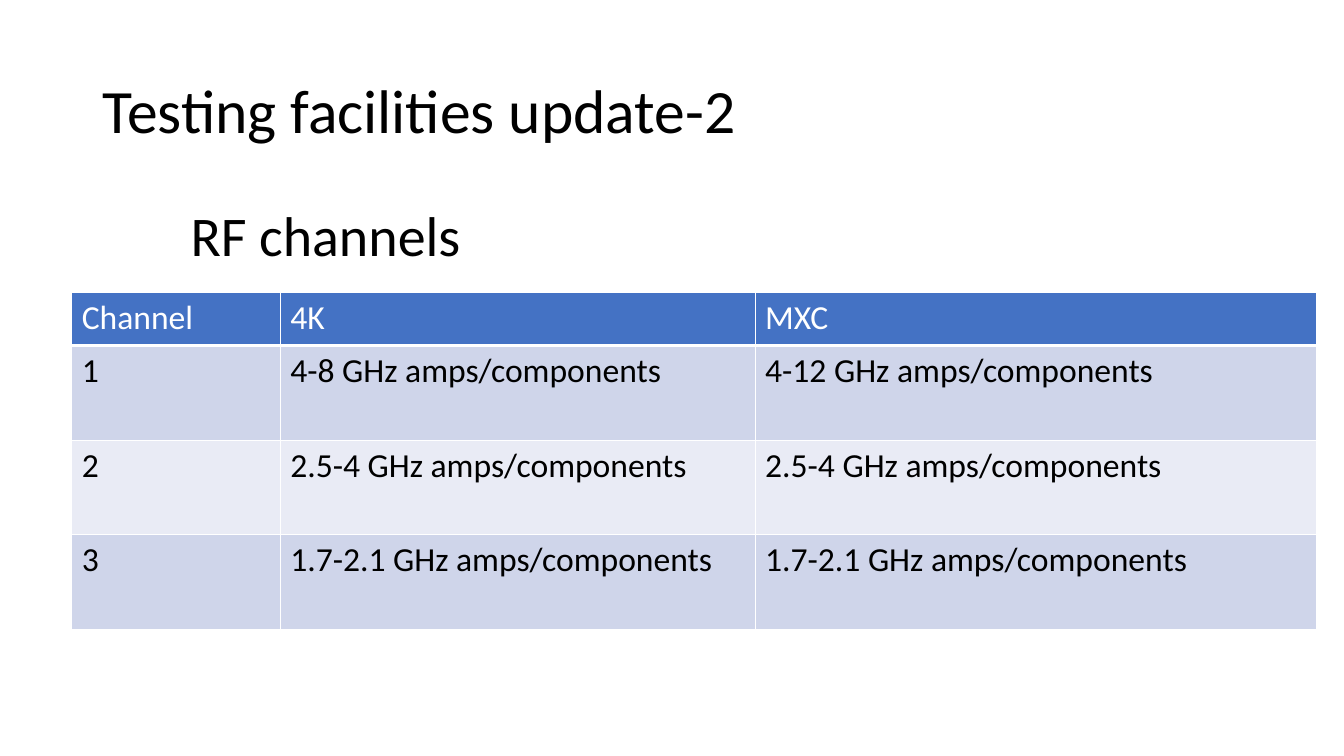
from lxml import etree
from pptx import Presentation
from pptx.dml.color import RGBColor
from pptx.enum.text import MSO_ANCHOR, PP_ALIGN
from pptx.oxml.ns import qn
from pptx.util import Pt

LEFT = PP_ALIGN.LEFT
TOP, MIDDLE = MSO_ANCHOR.TOP, MSO_ANCHOR.MIDDLE
TITLE_ONLY = 5
FONT = "Calibri"
COLORS = {
    "text": "000000",
    "white": "FFFFFF",
    "header": "4472C4",
    "odd": "CFD5EA",
    "even": "E9EBF5",
}
CHANNELS = [
    ("Channel", "4K", "MXC"),
    ("1", "4-8 GHz amps/components", "4-12 GHz amps/components"),
    ("2", "2.5-4 GHz amps/components", "2.5-4 GHz amps/components"),
    ("3", "1.7-2.1 GHz amps/components", "1.7-2.1 GHz amps/components"),
]
COLUMN_WIDTHS = [149, 339.2, 401]
ROW_HEIGHTS = [38] + [67.6] * 3


def write_text(frame, text, size, color="text", anchor=TOP, spacing=1.0):
    frame.word_wrap = True
    frame.vertical_anchor = anchor
    paragraph = frame.paragraphs[0]
    paragraph.text = text
    paragraph.alignment = LEFT
    paragraph.line_spacing = spacing
    font = paragraph.font
    font.name, font.size, font.bold = FONT, Pt(size), False
    font.color.rgb = RGBColor.from_string(COLORS[color])


class SlideBuilder:
    """Adds styled elements to one slide, with lengths in points."""

    def __init__(self, slide):
        self.slide = slide

    def title(self, text, left, top, width, height):
        shape = self.slide.shapes.title
        shape.left, shape.top = Pt(left), Pt(top)
        shape.width, shape.height = Pt(width), Pt(height)
        write_text(shape.text_frame, text, 44, anchor=MIDDLE, spacing=0.9)

    def text(self, text, left, top, width, height, size):
        shape = self.slide.shapes.add_textbox(Pt(left), Pt(top), Pt(width), Pt(height))
        write_text(shape.text_frame, text, size)

    def border(self, cell, side, width):
        properties = cell._tc.get_or_add_tcPr()
        line = etree.SubElement(properties, qn(f"a:ln{side}"), w=str(Pt(width)))
        fill = etree.SubElement(line, qn("a:solidFill"))
        etree.SubElement(fill, qn("a:srgbClr"), val=COLORS["white"])

    def table(self, rows, left, top, widths, heights, size):
        shape = self.slide.shapes.add_table(
            len(rows), len(widths), Pt(left), Pt(top), Pt(sum(widths)), Pt(sum(heights))
        )
        table = shape.table
        for column, width in zip(table.columns, widths):
            column.width = Pt(width)
        for row, height in zip(table.rows, heights):
            row.height = Pt(height)
        for row_index, values in enumerate(rows):
            is_header = row_index == 0
            fill = "header" if is_header else ("even", "odd")[row_index % 2]
            border_widths = {
                "L": 1,
                "R": 1,
                "T": 3 if row_index == 1 else 1,
                "B": 3 if is_header else 1,
            }
            for column_index, value in enumerate(values):
                cell = table.cell(row_index, column_index)
                for side, width in border_widths.items():
                    self.border(cell, side, width)
                cell.fill.solid()
                cell.fill.fore_color.rgb = RGBColor.from_string(COLORS[fill])
                write_text(cell.text_frame, value, size, "white" if is_header else "text")


def main():
    presentation = Presentation()
    presentation.slide_width, presentation.slide_height = Pt(960), Pt(540)
    slide = presentation.slides.add_slide(presentation.slide_layouts[TITLE_ONLY])
    builder = SlideBuilder(slide)
    builder.title("Testing facilities update-2", 66, 28.8, 828, 104.4)
    builder.table(CHANNELS, 51.2, 208.8, COLUMN_WIDTHS, ROW_HEIGHTS, 24)
    builder.text("RF channels", 129, 139.7, 378, 55.4, 40)
    presentation.save("out.pptx")


if __name__ == "__main__":
    main()
